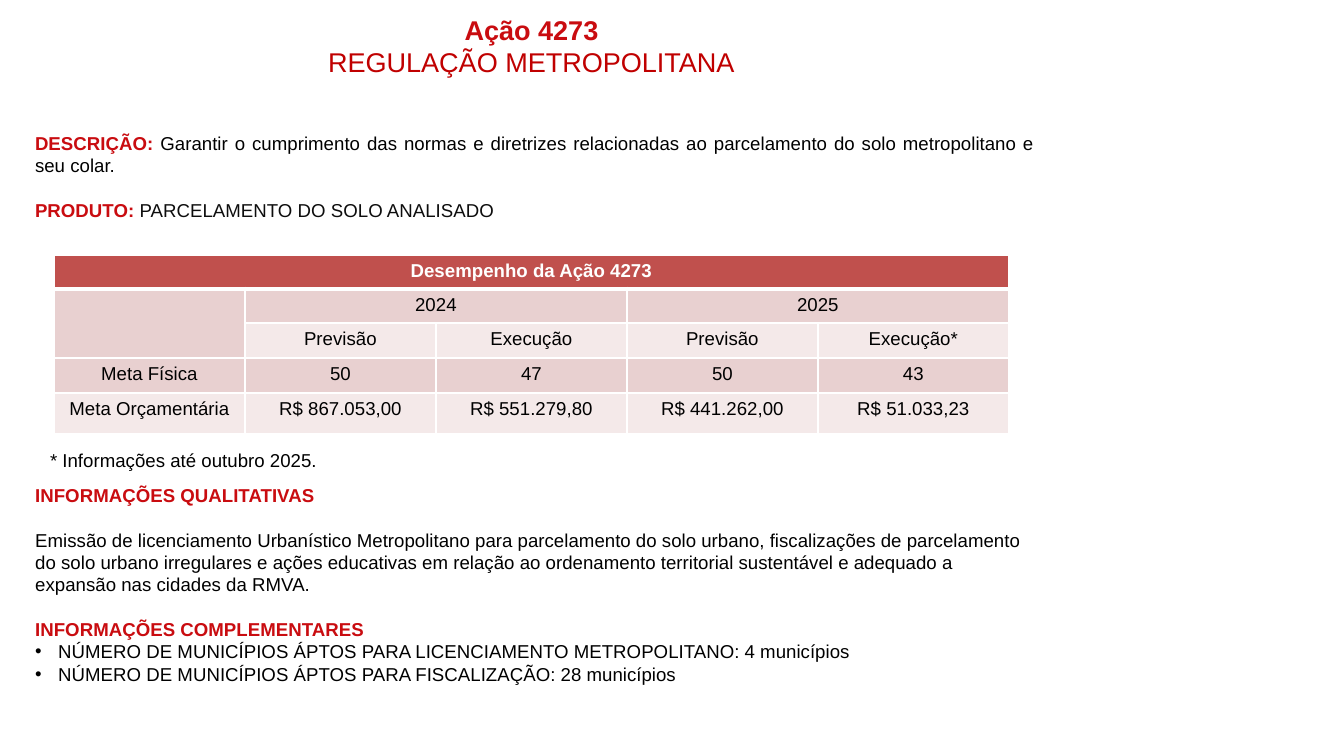
from lxml import etree
from pptx import Presentation
from pptx import util as u
from pptx.dml.color import RGBColor
from pptx.enum import text
from pptx.oxml import ns

PX = 914400 / 122
RED = RGBColor(0xC9, 0x0C, 0x10)
DARK_RED = RGBColor(0xC0, 0x00, 0x00)
BLACK = RGBColor(0x00, 0x00, 0x00)
NEAR_BLACK = RGBColor(0x0D, 0x0D, 0x0D)
WHITE = RGBColor(0xFF, 0xFF, 0xFF)
HEADER = RGBColor(0xC0, 0x50, 0x4D)
BAND_DARK = RGBColor(0xE8, 0xD0, 0xD0)
BAND_LIGHT = RGBColor(0xF4, 0xE9, 0xE9)
LEFT, CENTER, JUSTIFY = (text.PP_ALIGN.LEFT, text.PP_ALIGN.CENTER,
                         text.PP_ALIGN.JUSTIFY)
BLANK_LINE = 13

PERFORMANCE = [
    ["Desempenho da Ação 4273", "", "", "", ""],
    ["", "2024", "", "2025", ""],
    ["", "Previsão", "Execução", "Previsão", "Execução*"],
    ["Meta Física", "50", "47", "50", "43"],
    ["Meta Orçamentária", "R$ 867.053,00", "R$ 551.279,80",
     "R$ 441.262,00", "R$ 51.033,23"],
]
ROW_HEIGHTS = [34, 34, 35, 35, 41]
ROW_FILLS = [HEADER, BAND_DARK, BAND_LIGHT, BAND_DARK, BAND_LIGHT]
MERGES = [(0, 0, 0, 4), (1, 0, 2, 0), (1, 1, 1, 2), (1, 3, 1, 4)]


def px(length):
    """Turn pixels into EMU."""
    return u.Emu(round(length * PX))


def place(part, box):
    """Move a part to its box."""
    part.left, part.top, part.width, part.height = map(px, box)


def add_run(paragraph, wording, color, bold=False, size=11):
    """Append one formatted run."""
    run = paragraph.add_run()
    run.text = wording
    run.font.name = "Arial"
    run.font.size = u.Pt(size)
    run.font.bold = bold
    run.font.color.rgb = color


def set_bullet(paragraph, bulleted):
    """Give a paragraph a hanging bullet, or none."""
    properties = paragraph._p.get_or_add_pPr()
    indent = px(23) if bulleted else 0
    properties.set("marL", str(indent))
    properties.set("indent", str(-indent))
    if bulleted:
        etree.SubElement(properties, ns.qn("a:buFont"), typeface="Arial")
        etree.SubElement(properties, ns.qn("a:buChar"), char="•")
    else:
        etree.SubElement(properties, ns.qn("a:buNone"))


def fill_text(part, paragraphs, size=11):
    """Write (alignment, space before, bulleted, runs) paragraphs."""
    frame = part.text_frame
    frame.word_wrap = True
    frame.auto_size = text.MSO_AUTO_SIZE.NONE
    frame.vertical_anchor = text.MSO_ANCHOR.TOP
    for index, (alignment, before, bulleted, runs) in enumerate(paragraphs):
        paragraph = frame.add_paragraph() if index else frame.paragraphs[0]
        paragraph.alignment = alignment
        paragraph.space_before = u.Pt(before)
        set_bullet(paragraph, bulleted)
        for wording, color, bold in runs:
            add_run(paragraph, wording, color, bold, size)


def add_heading(slide, box):
    """Fill the title with the action number and name."""
    heading = slide.shapes.title
    place(heading, box)
    fill_text(heading, [
        (CENTER, 0, False, [("Ação 4273", RED, True)]),
        (CENTER, 0, False, [("REGULAÇÃO METROPOLITANA", DARK_RED, False)]),
    ], 16)


def add_description(slide, box):
    """Add the description and product."""
    description = slide.shapes.add_textbox(*map(px, box))
    fill_text(description, [
        (JUSTIFY, 0, False, [
            ("DESCRIÇÃO: ", RED, True),
            ("Garantir o cumprimento das normas e diretrizes relacionadas ao "
             "parcelamento do solo metropolitano e seu colar.", BLACK, False)]),
        (JUSTIFY, BLANK_LINE, False, [
            ("PRODUTO: ", RED, True),
            ("PARCELAMENTO DO SOLO ANALISADO", NEAR_BLACK, False)]),
    ])


def set_borders(cell, top, bottom):
    """Draw white cell borders, with top and bottom widths in points."""
    properties = cell._tc.get_or_add_tcPr()
    for side, width in (("L", 1), ("R", 1), ("T", top), ("B", bottom)):
        line = etree.SubElement(properties, ns.qn(f"a:ln{side}"),
                                w=str(u.Pt(width)))
        fill = etree.SubElement(line, ns.qn("a:solidFill"))
        etree.SubElement(fill, ns.qn("a:srgbClr"), val=str(WHITE))


def add_performance(slide, box):
    """Add the table of planned and achieved targets."""
    columns = len(PERFORMANCE[0])
    table = slide.shapes.add_table(len(PERFORMANCE), columns,
                                   *map(px, box)).table
    for column in table.columns:
        column.width = px(box[2] / columns)
    for r, values in enumerate(PERFORMANCE):
        table.rows[r].height = px(ROW_HEIGHTS[r])
        for c, value in enumerate(values):
            cell = table.cell(r, c)
            set_borders(cell, 3 if r == 1 else 1, 3 if r == 0 else 1)
            cell.fill.solid()
            cell.fill.fore_color.rgb = (BAND_DARK if (r, c) == (2, 0)
                                        else ROW_FILLS[r])
            paragraph = cell.text_frame.paragraphs[0]
            paragraph.alignment = CENTER
            if value:
                add_run(paragraph, value, BLACK if r else WHITE, r == 0)
            else:
                etree.SubElement(paragraph._p, ns.qn("a:endParaRPr"), sz="1100")
    for top, left, bottom, right in MERGES:
        table.cell(top, left).merge(table.cell(bottom, right))


def add_note(slide, box):
    """Add the note under the table."""
    note = slide.shapes.add_textbox(*map(px, box))
    fill_text(note, [(JUSTIFY, 0, False, [
        ("* Informações até outubro 2025.", BLACK, False)])])


def add_information(slide, box):
    """Fill the body with qualitative and complementary information."""
    information = slide.placeholders[1]
    place(information, box)
    fill_text(information, [
        (LEFT, 0, False, [("INFORMAÇÕES QUALITATIVAS", RED, True)]),
        (LEFT, BLANK_LINE, False, [
            ("Emissão de licenciamento Urbanístico Metropolitano para "
             "parcelamento do solo urbano, fiscalizações de parcelamento do "
             "solo urbano irregulares e ações educativas em relação ao "
             "ordenamento territorial sustentável e adequado a expansão nas "
             "cidades da RMVA.", BLACK, False)]),
        (JUSTIFY, BLANK_LINE, False, [
            ("INFORMAÇÕES COMPLEMENTARES", RED, True)]),
        (JUSTIFY, 0, True, [
            ("NÚMERO DE MUNICÍPIOS ÁPTOS PARA LICENCIAMENTO METROPOLITANO: "
             "4 municípios", BLACK, False)]),
        (JUSTIFY, 0, True, [
            ("NÚMERO DE MUNICÍPIOS ÁPTOS PARA FISCALIZAÇÃO: 28 municípios",
             BLACK, False)]),
    ])


def main():
    """Build and save the slide."""
    deck = Presentation()
    deck.slide_width, deck.slide_height = px(1344), px(756)
    slide = deck.slides.add_slide(deck.slide_layouts[1])
    add_heading(slide, (2, 7, 1059, 78))
    add_description(slide, (23, 126, 1024, 102))
    add_performance(slide, (54, 255, 955, sum(ROW_HEIGHTS)))
    add_note(slide, (38, 443, 1024, 35))
    add_information(slide, (23, 478, 1024, 216))
    deck.save("out.pptx")


if __name__ == "__main__":
    main()
